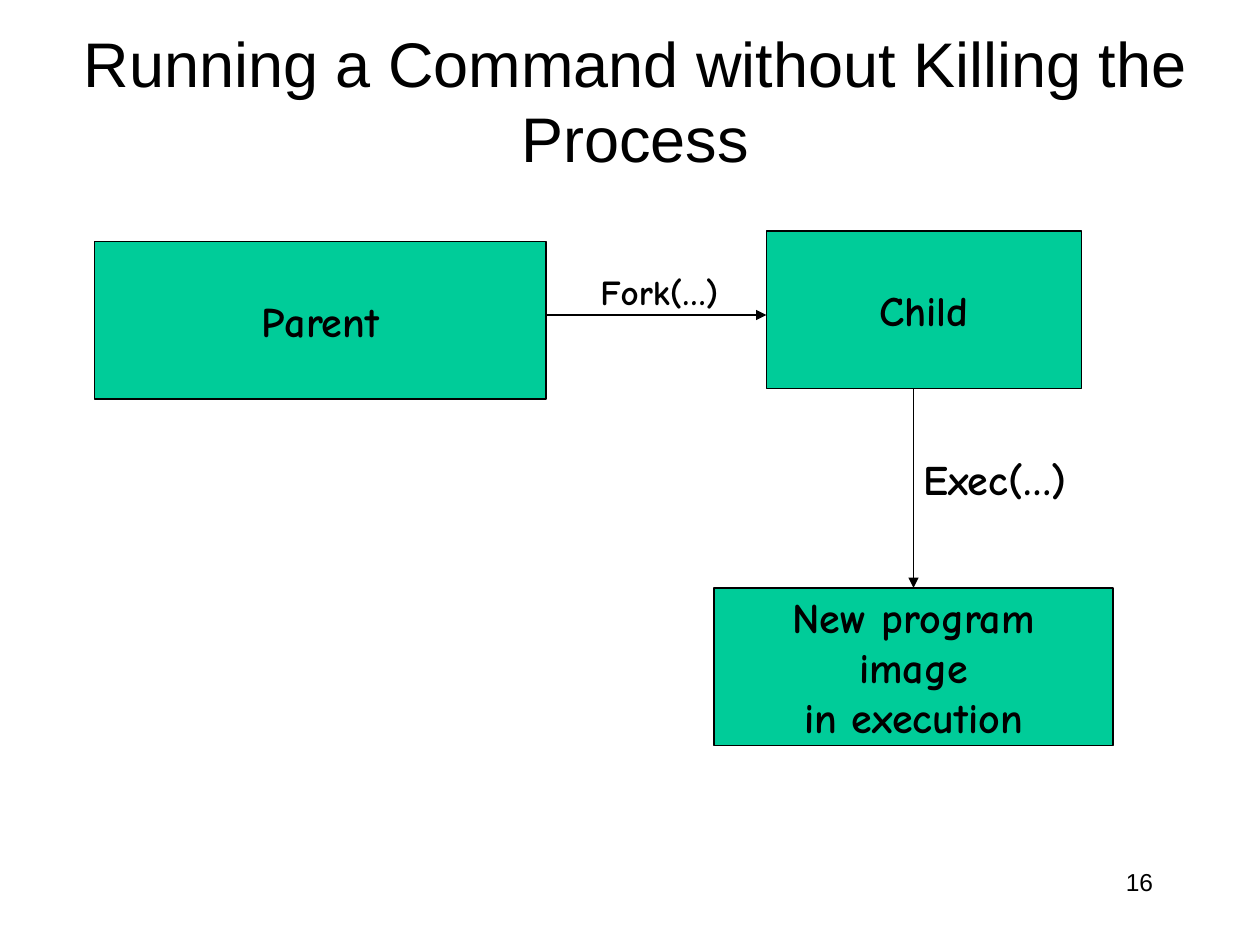
from pptx import Presentation
from pptx.dml.color import RGBColor
from pptx.enum.shapes import MSO_CONNECTOR, MSO_SHAPE
from pptx.enum.text import MSO_ANCHOR, PP_ALIGN
from pptx.oxml.ns import qn
from pptx.util import Pt
from lxml.etree import SubElement

COLORS = {"ink": "000000", "block": "00CC99"}
TITLE = ("Running a Command without Killing the Process", (30, 12, 666, 90))
PAGE_NUMBER = ("16", (516, 492, 150, 36))
BLOCKS = [
    ("Parent", (54, 138, 258, 90)),
    ("Child", (438, 132, 180, 90)),
    ("New program\nimage\nin execution", (408, 336, 228, 90)),
]
ARROWS = [((312, 180), (438, 180)), ((522, 222), (522, 336))]
LABELS = [
    ("Fork(…)", (336, 151, 86, 31), 20),
    ("Exec(…)", (520.5, 255.5, 103, 36), 24),
]


def color(name):
    return RGBColor.from_string(COLORS[name])


def write(shape, text, size=24, font="Comic Neue", bold=True,
          align=PP_ALIGN.CENTER, anchor=MSO_ANCHOR.MIDDLE, wrap=False):
    """Fill a shape with one formatted paragraph for each line of text."""
    frame = shape.text_frame
    frame.text = text
    frame.word_wrap = wrap
    frame.vertical_anchor = anchor
    for para in frame.paragraphs:
        para.alignment = align
        for span in para.runs:
            span.font.size = Pt(size)
            span.font.name = font
            span.font.bold = bold
            span.font.color.rgb = color("ink")


def lengths(values):
    return [Pt(value) for value in values]


def add_block(page, text, place):
    block = page.shapes.add_shape(MSO_SHAPE.RECTANGLE, *lengths(place))
    block.shadow.inherit = False
    block.fill.solid()
    block.fill.fore_color.rgb = color("block")
    block.line.color.rgb = color("ink")
    block.line.width = Pt(0.75)
    write(block, text)


def add_arrow(page, start, end):
    arrow = page.shapes.add_connector(MSO_CONNECTOR.STRAIGHT, *lengths(start + end))
    arrow.line.color.rgb = color("ink")
    arrow.line.width = Pt(0.75)
    SubElement(arrow.line._get_or_add_ln(), qn("a:tailEnd"), type="triangle")
    SubElement(arrow._element.spPr, qn("a:effectLst"))


def main():
    deck = Presentation()
    deck.slide_width, deck.slide_height = Pt(720), Pt(540)
    page = deck.slides.add_slide(deck.slide_layouts[5])

    text, place = TITLE
    title = page.shapes.title
    title.left, title.top, title.width, title.height = lengths(place)
    write(title, text, size=36, font="Arial", bold=False, wrap=True)

    text, place = PAGE_NUMBER
    number = page.shapes.add_textbox(*lengths(place))
    write(number, text, size=14, font="Arial", bold=False,
          align=PP_ALIGN.RIGHT, anchor=MSO_ANCHOR.TOP, wrap=True)

    for text, place in BLOCKS:
        add_block(page, text, place)
    for start, end in ARROWS:
        add_arrow(page, start, end)
    for text, place, size in LABELS:
        label = page.shapes.add_textbox(*lengths(place))
        write(label, text, size=size, align=PP_ALIGN.LEFT, anchor=MSO_ANCHOR.TOP)

    deck.save("out.pptx")


if __name__ == "__main__":
    main()
